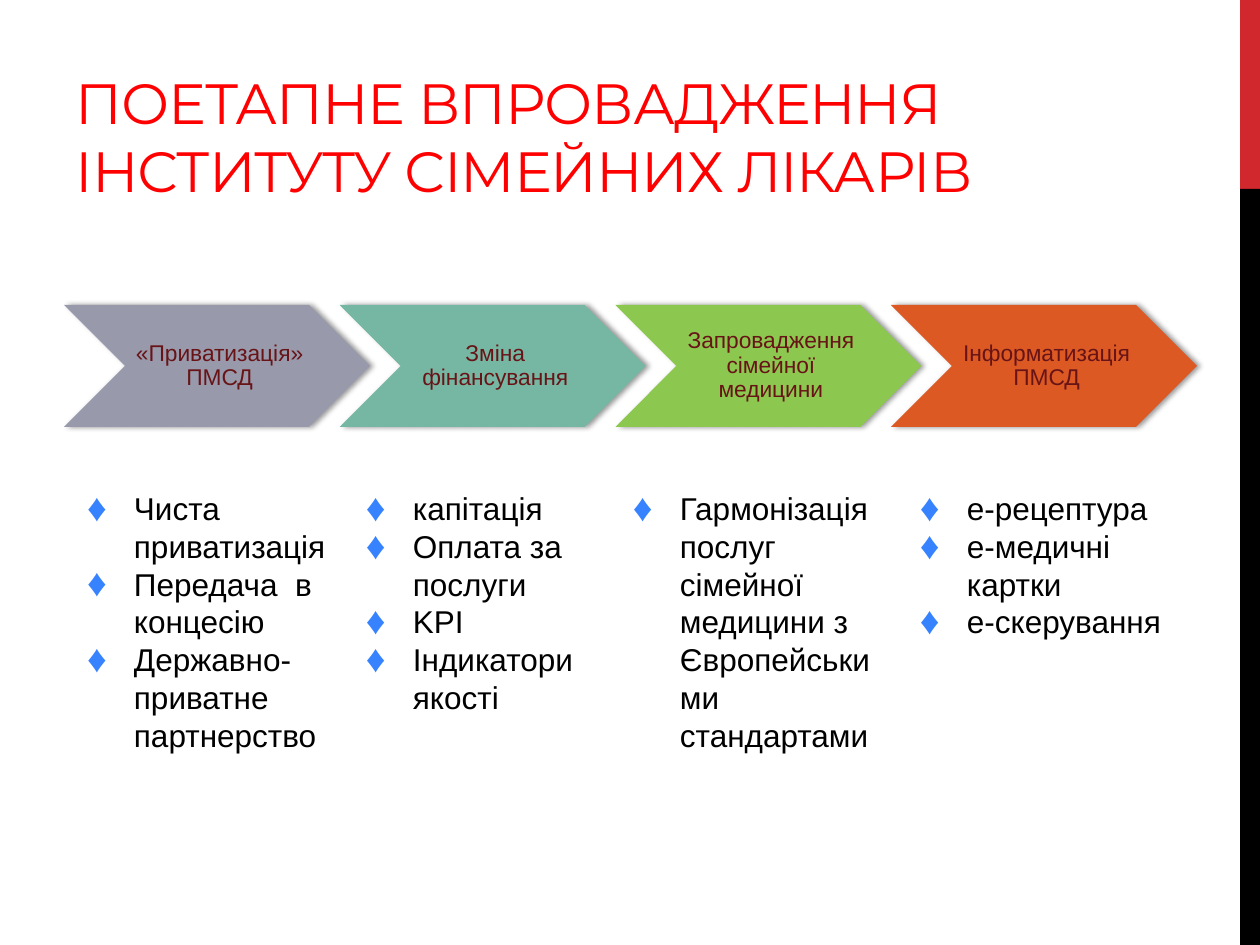
from lxml.etree import SubElement
from pptx import Presentation
from pptx.dml.color import RGBColor
from pptx.enum.shapes import MSO_SHAPE
from pptx.enum.text import MSO_ANCHOR, PP_ALIGN
from pptx.oxml.ns import qn
from pptx.util import Pt

SCALE = 914400 / 126
COLORS = {
    "red": "D1282E", "black": "000000", "title": "FF0000", "label": "681417",
    "bullet": "3783FF", "gray": "989AAC", "teal": "76B7A3",
    "green": "8CC74F", "orange": "DC5924",
}
STAGES = [
    ("«Приватизація» ПМСД", "gray"),
    ("Зміна фінансування", "teal"),
    ("Запровадження сімейної медицини", "green"),
    ("Інформатизація ПМСД", "orange"),
]
MEASURES = [
    ((74, 483, 268, 280), ["Чиста приватизація", "Передача  в концесію",
                           "Державно-приватне партнерство"]),
    ((353, 483, 268, 242), ["капітація", "Оплата за послуги", "KPI",
                            "Індикатори якості"]),
    ((620, 483, 268, 280), ["Гармонізація послуг сімейної медицини з "
                            "Європейськими стандартами"]),
    ((907, 483, 297, 165), ["е-рецептура", "е-медичні картки", "е-скерування"]),
]


def px(n):
    return round(n * SCALE)


def add_xml(parent, tag, **attrs):
    return SubElement(parent, qn(tag), {k: str(v) for k, v in attrs.items()})


def add_block(s, kind, box, color):
    sp = s.shapes.add_shape(kind, *map(px, box))
    sp.shadow.inherit = False
    sp.fill.solid()
    sp.fill.fore_color.rgb = RGBColor.from_string(COLORS[color])
    sp.line.fill.background()
    return sp


def add_text(s, box, lines, size, color="black", font="Arial", align=PP_ALIGN.LEFT,
             anchor=MSO_ANCHOR.TOP, insets=(13, 6, 13, 6), line_spacing=None,
             tracking=None, bullet=None):
    tf = s.shapes.add_textbox(*map(px, box)).text_frame
    tf.word_wrap = True
    tf.vertical_anchor = anchor
    tf.margin_left, tf.margin_top, tf.margin_right, tf.margin_bottom = map(px, insets)
    for i, line in enumerate(lines):
        p = tf.add_paragraph() if i else tf.paragraphs[0]
        p.alignment = align
        if line_spacing:
            p.line_spacing = line_spacing
        r = p.add_run()
        r.text = line
        r.font.size = Pt(size)
        r.font.name = font
        r.font.color.rgb = RGBColor.from_string(COLORS[color])
        if tracking:
            r.font._element.set("spc", str(tracking))
        if bullet:
            add_bullet(p, bullet)


def add_bullet(p, char):
    pPr = p._p.get_or_add_pPr()
    pPr.set("marL", str(px(47)))
    pPr.set("indent", str(-px(47)))
    add_xml(add_xml(pPr, "a:buClr"), "a:srgbClr", val=COLORS["bullet"])
    add_xml(pPr, "a:buSzPct", val=123000)
    add_xml(pPr, "a:buFont", typeface="Arial")
    add_xml(pPr, "a:buChar", char=char)


def add_shadow(sp):
    effects = sp._element.spPr.find(qn("a:effectLst"))
    shadow = add_xml(effects, "a:outerShdw", blurRad=Pt(3.1), dist=Pt(1.8),
                     dir=0, rotWithShape=0)
    color = add_xml(shadow, "a:srgbClr", val=COLORS["black"])
    add_xml(color, "a:alpha", val=40000)


def add_sidebar(s, box):
    x, y, w, h = box
    top = h // 5
    add_block(s, MSO_SHAPE.RECTANGLE, (x, y, w, top), "red")
    add_block(s, MSO_SHAPE.RECTANGLE, (x, y + top, w, h - top), "black")


def add_title(s, box):
    add_text(s, box, ["ПОЕТАПНЕ ВПРОВАДЖЕННЯ ІНСТИТУТУ СІМЕЙНИХ ЛІКАРІВ"], 32.4,
             color="title", font="Montserrat", anchor=MSO_ANCHOR.BOTTOM, tracking=-60)


def add_stages(s, box):
    x, y, w, h = box
    chevron_w = 306
    pitch = (w - chevron_w) / (len(STAGES) - 1)
    for i, (label, color) in enumerate(STAGES):
        left = x + i * pitch
        add_shadow(add_block(s, MSO_SHAPE.CHEVRON, (left, y, chevron_w, h), color))
        add_text(s, (left + h / 2, y, chevron_w - h, h), [label], 13, color="label",
                 align=PP_ALIGN.CENTER, anchor=MSO_ANCHOR.MIDDLE,
                 insets=(8, 3, 3, 3), line_spacing=0.9)


def add_measures(s):
    for box, items in MEASURES:
        add_text(s, box, items, 18, bullet="♦")


def main():
    prs = Presentation()
    prs.slide_width, prs.slide_height = px(1260), px(945)
    s = prs.slides.add_slide(prs.slide_layouts[6])
    add_sidebar(s, (1240, 0, 20, 945))
    add_title(s, (63, 21, 1113, 189))
    add_stages(s, (64, 305, 1133, 122))
    add_measures(s)
    prs.save("out.pptx")


if __name__ == "__main__":
    main()
